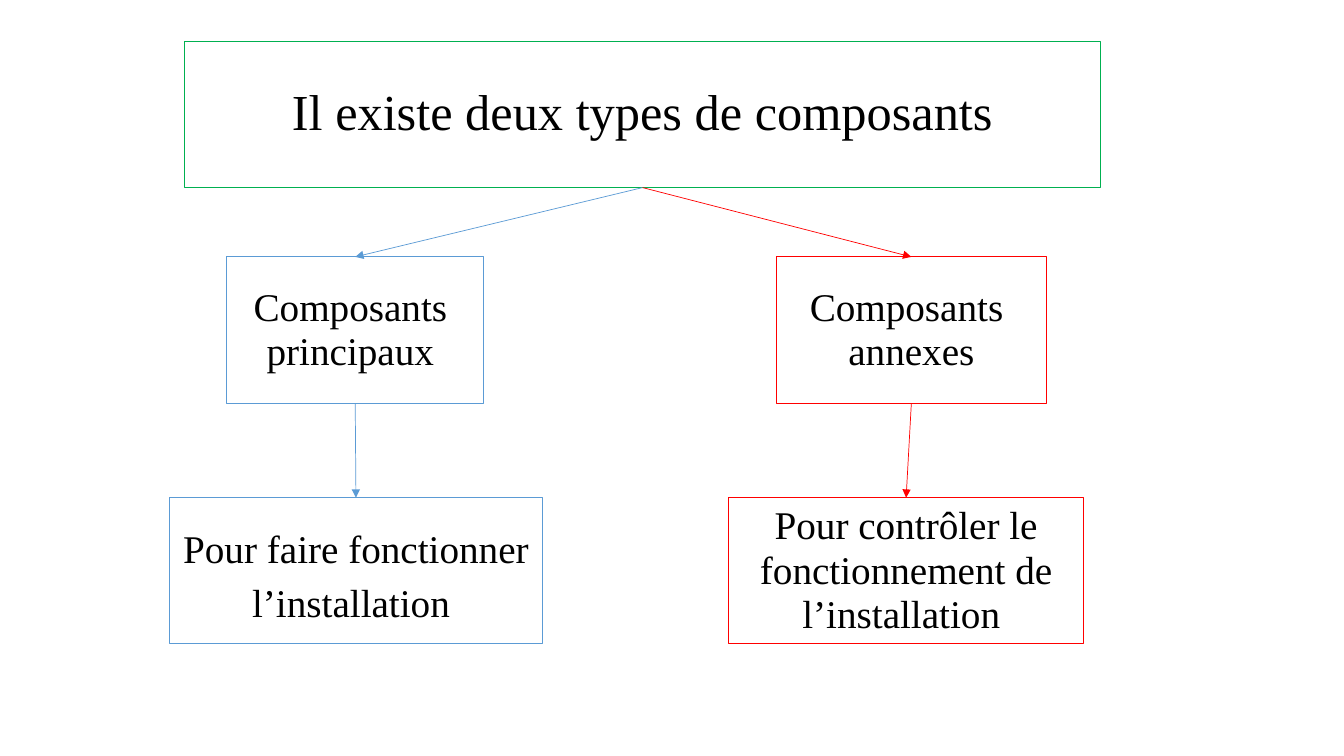
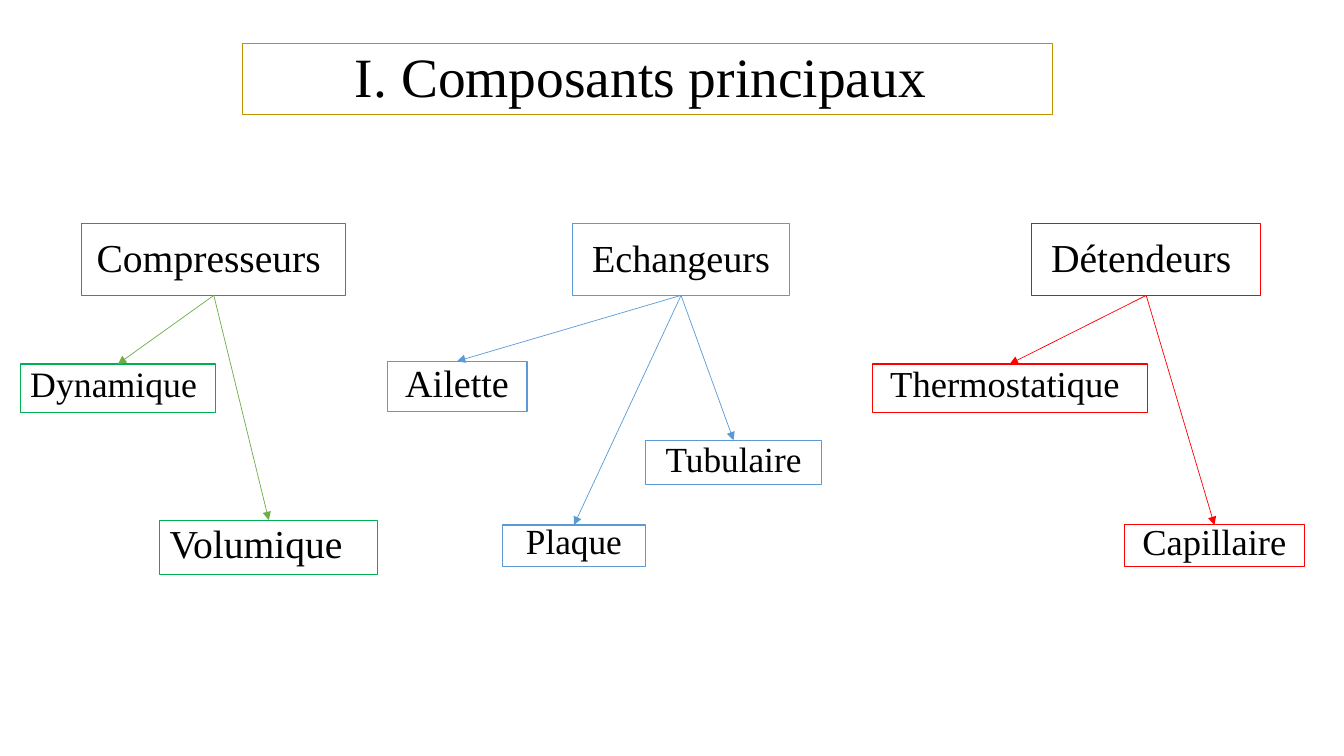
"""Build two slides that chart the types of components of an installation."""
from pptx import Presentation
from pptx.dml.color import RGBColor
from pptx.enum.shapes import MSO_CONNECTOR, MSO_SHAPE
from pptx.enum.text import MSO_ANCHOR, PP_ALIGN
from pptx.oxml.ns import qn
from pptx.util import Pt
from lxml.etree import SubElement

FONT = "Times New Roman"
BLACK, GREEN, LEAF = "000000", "00B050", "70AD47"
BLUE, RED, GOLD = "5B9BD5", "FF0000", "BF9000"
LEFT, CENTER = PP_ALIGN.LEFT, PP_ALIGN.CENTER
BOTTOM_SITE, TOP_SITE = 2, 0


def add_box(s, text, bounds, color, size, spacing=0.9, align=CENTER):
    sp = s.shapes.add_shape(MSO_SHAPE.RECTANGLE, *[Pt(v) for v in bounds])
    sp.shadow.inherit = False
    sp.fill.background()
    sp.line.color.rgb = RGBColor.from_string(color)
    sp.line.width = Pt(0.75)
    tf = sp.text_frame
    tf.word_wrap = True
    tf.vertical_anchor = MSO_ANCHOR.MIDDLE
    tf.text = text
    for p in tf.paragraphs:
        p.alignment = align
        p.line_spacing = spacing
        for r in p.runs:
            r.font.name = FONT
            r.font.size = Pt(size)
            r.font.color.rgb = RGBColor.from_string(BLACK)
    return sp


def add_arrow(s, start, end, color):
    line = s.shapes.add_connector(MSO_CONNECTOR.STRAIGHT, 0, 0, 0, 0)
    line.begin_connect(start, BOTTOM_SITE)
    line.end_connect(end, TOP_SITE)
    line.line.color.rgb = RGBColor.from_string(color)
    line.line.width = Pt(0.5)
    SubElement(line.line._get_or_add_ln(), qn("a:tailEnd"), type="triangle")
    SubElement(line._element.spPr, qn("a:effectLst"))


prs = Presentation()
prs.slide_width, prs.slide_height = Pt(960), Pt(540)
blank = prs.slide_layouts[6]

s = prs.slides.add_slide(blank)
title = add_box(s, "Il existe deux types de composants",
                (132, 29.5, 654, 104.5), GREEN, 36)
branches = [
    (BLUE, "Composants \nprincipaux ", 162, 183.5,
     "Pour faire fonctionner l’installation ", 121, 266.5, 1.15),
    (RED, "Composants \nannexes", 554.5, 193,
     "Pour contrôler le fonctionnement de l’installation ", 520.5, 253.5, 0.95),
]
for color, name, name_x, name_w, role, role_x, role_w, spacing in branches:
    kind = add_box(s, name, (name_x, 183.5, name_w, 104.5), color, 28, 0.95)
    purpose = add_box(s, role, (role_x, 355.5, role_w, 104.5), color, 28, spacing)
    add_arrow(s, title, kind, color)
    add_arrow(s, kind, purpose, color)

s = prs.slides.add_slide(blank)
add_box(s, "I. Composants principaux ", (173.5, 31, 578, 51), GOLD, 39.6)
families = [
    ("Compresseurs ", 58.5, 188.5, 28.3, GREEN, LEAF, LEFT, [
        ("Dynamique ", (14.5, 260, 139.5, 34.5), 25.5, 0.7),
        ("Volumique ", (114, 371.5, 156, 39), 28.3, 0.8),
    ]),
    ("Echangeurs", 409, 155, 27.3, BLUE, BLUE, CENTER, [
        ("Ailette", (276.5, 258, 100, 36), 27.3, 0.8),
        ("Plaque", (359, 375, 102, 29.5), 25.2, 0.7),
        ("Tubulaire", (461, 314.5, 126, 31.5), 25.2, 0.8),
    ]),
    ("Détendeurs ", 737, 163.5, 28.3, RED, RED, CENTER, [
        ("Thermostatique ", (623, 260, 196.5, 34.5), 26.1, 0.7),
        ("Capillaire", (803, 375, 129, 30), 26.1, 0.7),
    ]),
]
for name, x, w, size, color, arrow_color, align, members in families:
    family = add_box(s, name, (x, 160, w, 51), color, size)
    for text, bounds, member_size, spacing in members:
        member = add_box(s, text, bounds, color, member_size, spacing, align)
        add_arrow(s, family, member, arrow_color)

prs.save("out.pptx")
